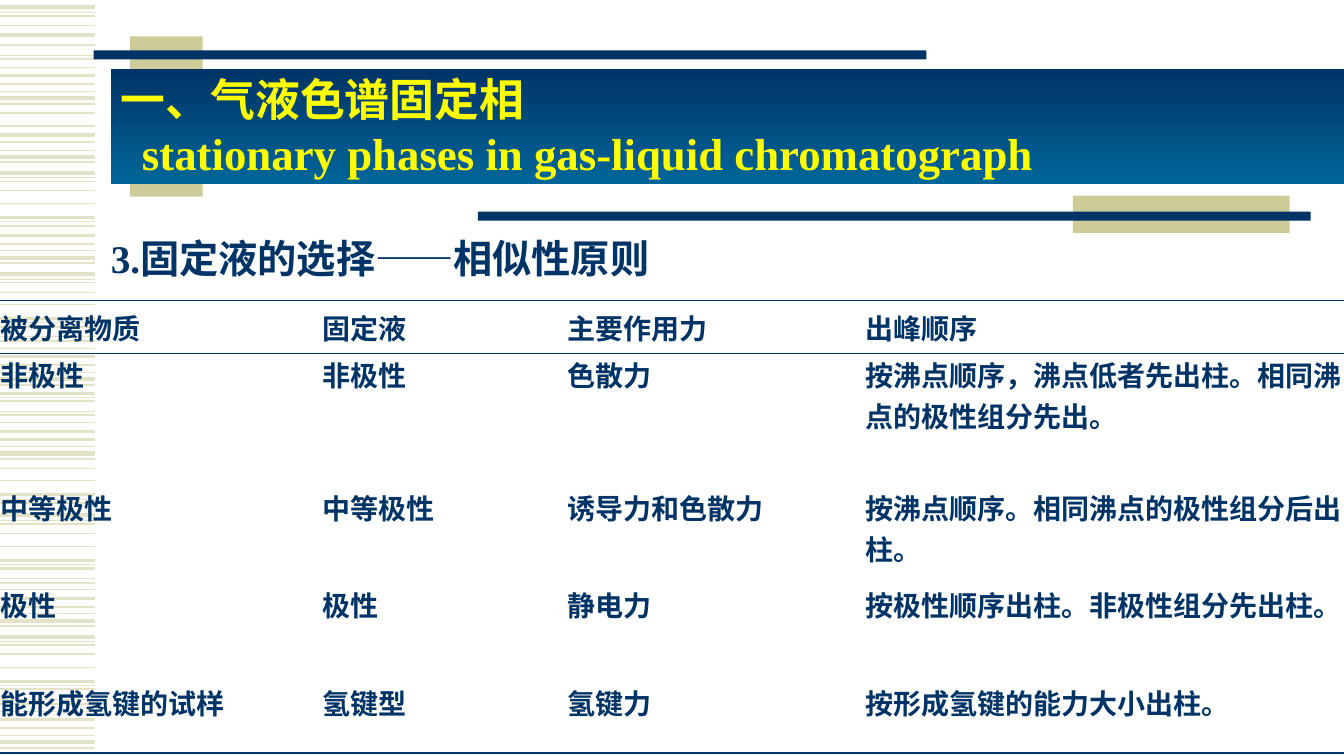
import pptx
import pptx.dml.color
import pptx.enum.shapes
import pptx.enum.text
import pptx.oxml
import pptx.oxml.ns
import pptx.util

Inches = pptx.util.Inches
Pt = pptx.util.Pt
NAVY, BLUE, SAND, PALE, YELLOW = "003366", "006699", "CCCC99", "E3E2C7", "FFFF00"

STRIPES = {
    0.75: [0.12, 0.55, 0.91, 1.49, 1.76, 2.2, 2.49, 2.77, 3.2, 3.34, 3.7, 3.94, 4.08,
           4.43, 4.96, 5.16, 5.6, 5.74, 6.09, 6.36, 6.8, 6.94, 7.3],
    1: [0.16, 0.25, 0.67, 1.12, 1.25, 1.8, 1.89, 2.02, 2.8, 2.9, 3.02, 3.46, 4.19,
        4.65, 4.77, 5.2, 5.29, 5.42, 5.85, 6.4, 6.49, 6.62, 7.06],
    1.5: [0.45, 0.59, 0.83, 1.03, 1.41, 1.61, 2.24, 2.42, 2.61, 3.24, 3.38, 3.62, 3.82,
          3.98, 4.12, 4.36, 4.55, 4.99, 5.64, 5.78, 6.02, 6.21, 6.84, 6.98, 7.22, 7.42],
    2.25: [0.75, 1.34, 2.16, 2.34, 3.16, 3.54, 3.9, 4.28, 4.91, 5.56, 5.94, 6.76, 7.14],
    3: [0.07, 0.35, 0.97, 1.56, 1.72, 2.56, 2.72, 3.76, 4.5, 5.11, 6.16, 6.32, 7.36],
}
COLUMN_WIDTHS = [3.2, 2.43, 2.95, 4.75]
ROW_HEIGHTS = [0.53, 1.32, 0.96, 0.98, 0.7]
ROWS = [
    ["被分离物质", "固定液", "主要作用力", "出峰顺序"],
    ["非极性", "非极性", "色散力", "按沸点顺序，沸点低者先出柱。相同沸点的极性组分先出。"],
    ["中等极性", "中等极性", "诱导力和色散力", "按沸点顺序。相同沸点的极性组分后出柱。"],
    ["极性", "极性", "静电力", "按极性顺序出柱。非极性组分先出柱。"],
    ["能形成氢键的试样", "氢键型", "氢键力", "按形成氢键的能力大小出柱。"],
]


def color(value):
    return pptx.dml.color.RGBColor.from_string(value)


def write(frame, text, size, fill=NAVY, anchor="TOP", inset=(0.1, 0.05),
          before=0, spacing=None, hanging=0):
    frame.word_wrap = True
    frame.auto_size = pptx.enum.text.MSO_AUTO_SIZE.NONE
    frame.vertical_anchor = pptx.enum.text.MSO_ANCHOR[anchor]
    frame.margin_left = frame.margin_right = Inches(inset[0])
    frame.margin_top = frame.margin_bottom = Inches(inset[1])
    paragraph = frame.paragraphs[0]
    paragraph.text = text
    paragraph.alignment = pptx.enum.text.PP_ALIGN.LEFT
    paragraph.space_before = Pt(before)
    if spacing:
        paragraph.line_spacing = spacing
    if hanging:
        properties = paragraph._p.get_or_add_pPr()
        properties.set("marL", str(Inches(hanging)))
        properties.set("indent", str(-Inches(hanging)))
    for run in paragraph.runs:
        run.font.name = "Times New Roman"
        run.font.size = Pt(size)
        run.font.bold = True
        run.font.color.rgb = color(fill)


def add_rectangle(slide, left, top, width, height, fill):
    shape = slide.shapes.add_shape(
        pptx.enum.shapes.MSO_SHAPE.RECTANGLE,
        Inches(left), Inches(top), Inches(width), Inches(height))
    shape.shadow.inherit = False
    shape.line.fill.background()
    shape.fill.solid()
    shape.fill.fore_color.rgb = color(fill)
    return shape


def add_stripes(slide, left, top, width):
    for weight, offsets in STRIPES.items():
        for offset in offsets:
            y = Inches(top + offset)
            line = slide.shapes.add_connector(
                pptx.enum.shapes.MSO_CONNECTOR.STRAIGHT,
                Inches(left), y, Inches(left + width), y)
            line.line.color.rgb = color(PALE)
            line.line.width = Pt(weight)
            line._element.spPr.append(pptx.oxml.parse_xml(
                f"<a:effectLst {pptx.oxml.ns.nsdecls('a')}/>"))


def add_bars(slide, left, top):
    add_rectangle(slide, left + 0.36, top, 0.72, 1.59, SAND)
    add_rectangle(slide, left, top + 0.14, 8.26, 0.09, NAVY)
    add_rectangle(slide, left + 9.71, top + 1.58, 2.15, 0.37, SAND)
    add_rectangle(slide, left + 3.81, top + 1.74, 8.26, 0.09, NAVY)


def add_banner(slide, left, top, width, height):
    banner = add_rectangle(slide, left, top, width, height, NAVY)
    banner.fill.gradient()
    banner.fill.gradient_angle = 270
    for stop, value, position in zip(banner.fill.gradient_stops, (NAVY, BLUE), (0, 1)):
        stop.color.rgb = color(value)
        stop.position = position
    write(banner.text_frame,
          "一、气液色谱固定相\vstationary phases in gas-liquid chromatograph",
          32, fill=YELLOW, anchor="BOTTOM", hanging=0.21)


def place_title(slide, left, top, width, height):
    title = slide.shapes.title
    title.left, title.top = Inches(left), Inches(top)
    title.width, title.height = Inches(width), Inches(height)
    write(title.text_frame, "3.固定液的选择——相似性原则", 28, anchor="BOTTOM", spacing=0.85)


def set_borders(cell, top, bottom):
    properties = cell._tc.get_or_add_tcPr()
    for side, weight in (("L", 0), ("R", 0), ("T", top), ("B", bottom)):
        paint = (f'<a:solidFill><a:srgbClr val="{NAVY}"/></a:solidFill>'
                 if weight else "<a:noFill/>")
        properties.append(pptx.oxml.parse_xml(
            f'<a:ln{side} {pptx.oxml.ns.nsdecls("a")} w="{Pt(weight)}">{paint}</a:ln{side}>'))


def add_selection_table(slide, left, top):
    table = slide.shapes.add_table(
        len(ROWS), len(COLUMN_WIDTHS), Inches(left), Inches(top),
        Inches(sum(COLUMN_WIDTHS)), Inches(sum(ROW_HEIGHTS))).table
    table.first_row = table.horz_banding = False
    for column, width in zip(table.columns, COLUMN_WIDTHS):
        column.width = Inches(width)
    rules = [1, 1, 0, 0, 0, 2.25]
    for index, (row, height) in enumerate(zip(table.rows, ROW_HEIGHTS)):
        row.height = Inches(height)
        for cell, text in zip(row.cells, ROWS[index]):
            write(cell.text_frame, text, 20, before=4)
            cell.margin_left = cell.margin_right = cell.margin_top = cell.margin_bottom = 0
            cell.vertical_anchor = pptx.enum.text.MSO_ANCHOR["TOP" if index else "MIDDLE"]
            set_borders(cell, rules[index], rules[index + 1])
            cell.fill.background()


def main():
    presentation = pptx.Presentation()
    presentation.slide_width = Inches(13.33)
    presentation.slide_height = Inches(7.5)
    slide = presentation.slides.add_slide(presentation.slide_layouts[5])
    add_stripes(slide, 0, 0, 0.94)
    add_bars(slide, 0.93, 0.36)
    place_title(slide, 1, 2.18, 11.33, 0.66)
    add_selection_table(slide, 0, 2.98)
    add_banner(slide, 1.1, 0.68, 12.23, 1.15)
    presentation.save("out.pptx")


if __name__ == "__main__":
    main()
